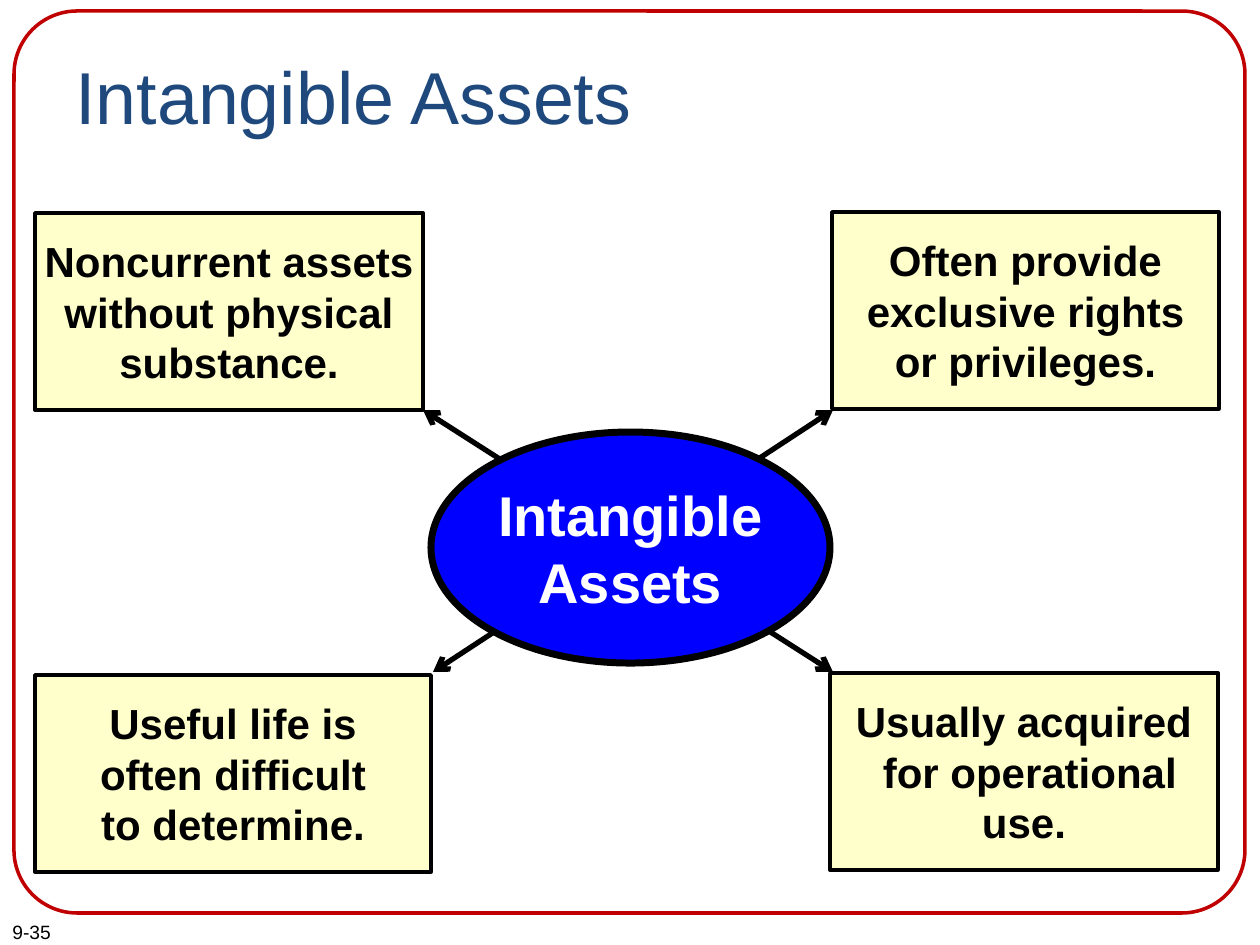
import pptx
import pptx.util
import pptx.dml.color
import pptx.enum.shapes
import pptx.enum.text
import pptx.oxml.ns
import lxml.etree

Shape = pptx.enum.shapes.MSO_SHAPE
Align = pptx.enum.text.PP_ALIGN
Anchor = pptx.enum.text.MSO_ANCHOR

# Content: lengths in px, boxes as (left, top, width, height)
TITLE = ("Intangible Assets", (63, 38, 1134, 158))
PAGE_NUMBER = ("9-35", (0, 914, 179, 37))
FRAME = (14, 11, 1231, 902)
HUB = (["Intangible", "Assets"], (431, 432, 399, 231))
TRAITS = [
    (["Noncurrent assets", "without physical", "substance."], (35, 213, 388, 197)),
    (["Useful life is", "often difficult", "to determine."], (35, 675, 396, 197)),
    (["Usually acquired", " for operational", " use. "], (830, 673, 388, 197)),
    (["Often provide", "exclusive rights", "or privileges."], (832, 212, 387, 197)),
]
ARROWS = [(423, 410, 833, 672), (433, 672, 833, 410)]

THEME = {
    "font": "Arial",
    "ink": "000000", "title": "1F497D", "frame": "C00000",
    "trait": "FFFFCC", "hub": "0000FF", "hub_text": "FFFFFF",
    "title_size": 42, "hub_size": 32, "trait_size": 24, "number_size": 11,
}
PX = 914400 / 126


def emu(*lengths):
    return [round(length * PX) for length in lengths]


def color(name):
    return pptx.dml.color.RGBColor.from_string(THEME[name])


def write(box, text, size, ink="ink", bold=False, align=Align.LEFT,
          anchor=Anchor.TOP, wrap=True, top=6):
    frame = box.text_frame
    frame.auto_size = pptx.enum.text.MSO_AUTO_SIZE.NONE
    frame.word_wrap = wrap
    frame.vertical_anchor = anchor
    frame.margin_top = emu(top)[0]
    para = frame.paragraphs[0]
    para.text = text
    para.alignment = align
    for span in para.runs:
        span.font.name = THEME["font"]
        span.font.size = pptx.util.Pt(THEME[size])
        span.font.bold = bold
        span.font.color.rgb = color(ink)


def outline(item, ink, width):
    item.line.color.rgb = color(ink)
    item.line.width = pptx.util.Pt(width)


def add_panel(page, kind, place, fill=None, ink="ink", width=2):
    panel = page.shapes.add_shape(kind, *emu(*place))
    panel.shadow.inherit = False
    if fill:
        panel.fill.solid()
        panel.fill.fore_color.rgb = color(fill)
    else:
        panel.fill.background()
    outline(panel, ink, width)
    return panel


def add_arrow(page, ends):
    arrow = page.shapes.add_connector(
        pptx.enum.shapes.MSO_CONNECTOR.STRAIGHT, *emu(*ends))
    outline(arrow, "ink", 3)
    line = arrow.line._get_or_add_ln()
    for end in ("a:headEnd", "a:tailEnd"):
        lxml.etree.SubElement(line, pptx.oxml.ns.qn(end), type="arrow")
    lxml.etree.SubElement(arrow._element.spPr, pptx.oxml.ns.qn("a:effectLst"))


def main():
    deck = pptx.Presentation()
    deck.slide_width, deck.slide_height = emu(1260, 945)
    page = deck.slides.add_slide(deck.slide_layouts[5])

    # Title, page number and frame
    text, place = TITLE
    title = page.shapes.title
    title.left, title.top, title.width, title.height = emu(*place)
    write(title, text, "title_size", ink="title", top=13)
    text, place = PAGE_NUMBER
    write(page.shapes.add_textbox(*emu(*place)), text, "number_size")
    add_panel(page, Shape.ROUNDED_RECTANGLE, FRAME, ink="frame").adjustments[0] = 0.07

    # Four traits in the corners
    centred = {"bold": True, "align": Align.CENTER, "anchor": Anchor.MIDDLE, "wrap": False}
    for lines, place in TRAITS:
        box = add_panel(page, Shape.RECTANGLE, place, fill="trait")
        write(box, "\v".join(lines), "trait_size", **centred)

    # Crossing arrows, with the hub over their middle
    for ends in ARROWS:
        add_arrow(page, ends)
    lines, place = HUB
    hub = add_panel(page, Shape.OVAL, place, fill="hub", width=4)
    write(hub, "\v".join(lines), "hub_size", ink="hub_text", **centred)

    deck.save("out.pptx")


if __name__ == "__main__":
    main()
